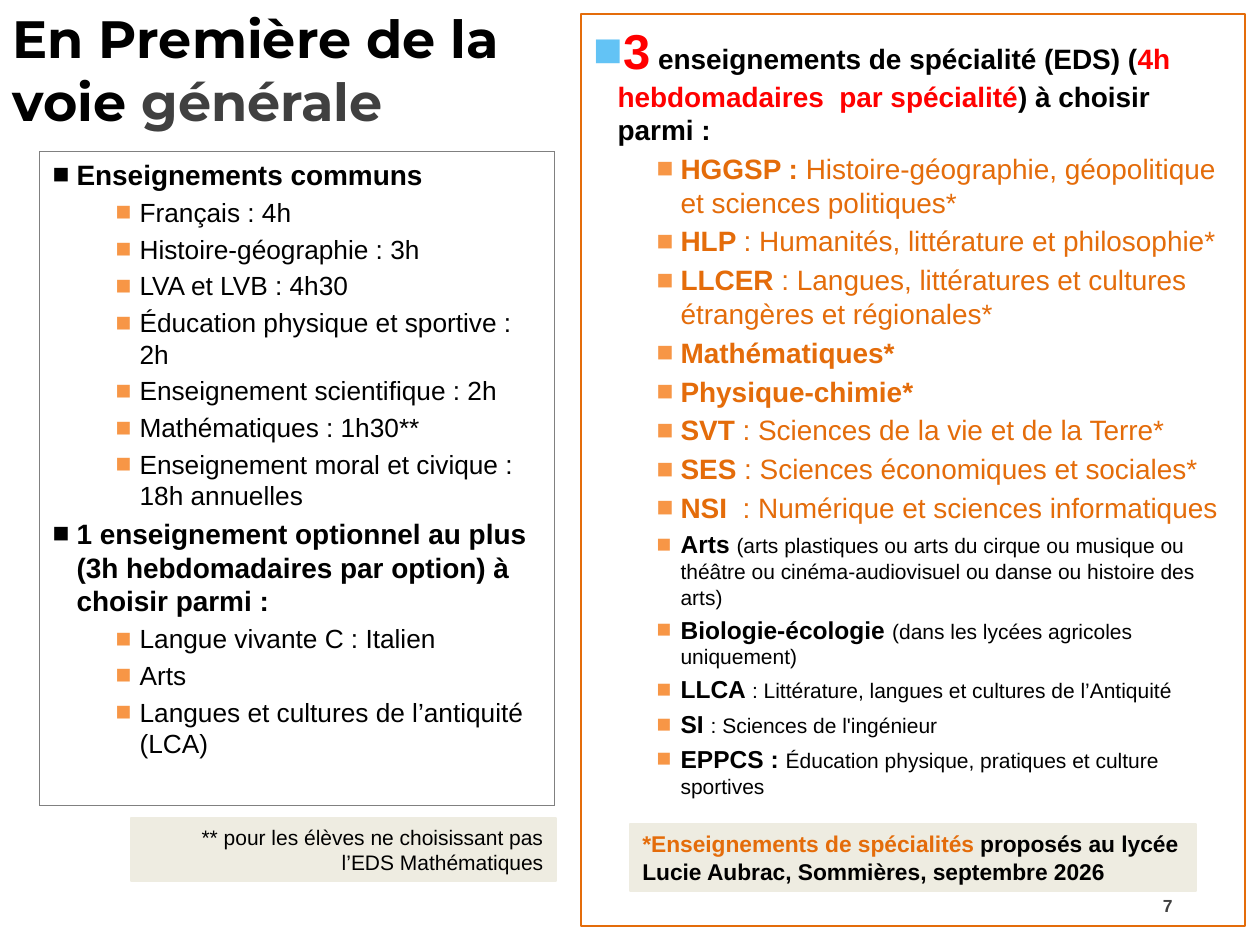
from dataclasses import dataclass

from lxml.etree import SubElement
from pptx import Presentation
from pptx.dml.color import RGBColor
from pptx.enum.shapes import MSO_SHAPE
from pptx.enum.text import MSO_ANCHOR, MSO_AUTO_SIZE, PP_ALIGN
from pptx.oxml.ns import qn
from pptx.util import Emu, Pt

SCALE = 914400 / 126  # EMU in one px


@dataclass(frozen=True)
class Theme:
    head: str = "Montserrat"
    body: str = "Arial"
    black: str = "000000"
    grey: str = "404040"
    frame: str = "808080"
    red: str = "FF0000"
    orange: str = "E46C0A"
    mark: str = "F79646"
    blue: str = "63C3F5"
    beige: str = "EEECE1"
    title: int = 30
    huge: int = 28
    main: int = 16
    item: int = 15
    name: int = 14
    note: int = 13
    small: int = 12
    page: int = 10


T = Theme()

COMMON = [
    "Français : 4h",
    "Histoire-géographie : 3h",
    "LVA et LVB : 4h30",
    "Éducation physique et sportive : 2h",
    "Enseignement scientifique : 2h",
    "Mathématiques : 1h30**",
    "Enseignement moral et civique : 18h annuelles",
]
OPTIONS = [
    "Langue vivante C : Italien",
    "Arts",
    "Langues et cultures de l’antiquité (LCA)",
]
LOCAL = [
    ("HGGSP : ", "Histoire-géographie, géopolitique et sciences politiques*"),
    ("HLP ", ": Humanités, littérature et philosophie*"),
    ("LLCER ", ": Langues, littératures et cultures étrangères et régionales*"),
    ("Mathématiques*", ""),
    ("Physique-chimie*", ""),
    ("SVT ", ": Sciences de la vie et de la Terre*"),
    ("SES ", ": Sciences économiques et sociales*"),
    ("NSI  ", ": Numérique et sciences informatiques"),
]
OTHER = [
    ("Arts ", "(arts plastiques ou arts du cirque ou musique ou théâtre "
              "ou cinéma-audiovisuel ou danse ou histoire des arts)"),
    ("Biologie-écologie ", "(dans les lycées agricoles uniquement)"),
    ("LLCA ", ": Littérature, langues et cultures de l’Antiquité"),
    ("SI ", ": Sciences de l'ingénieur"),
    ("EPPCS : ", "Éducation physique, pratiques et culture sportives"),
]


def px(n):
    return Emu(round(n * SCALE))


def rgb(color):
    return RGBColor.from_string(color)


def write(para, text, size=T.main, color=T.black, bold=False, font=T.body):
    """Add text to a paragraph; a newline becomes a line break."""
    for i, part in enumerate(text.split("\n")):
        if i:
            para.add_line_break()
        run = para.add_run()
        run.text = part
        run.font.size, run.font.bold, run.font.name = Pt(size), bold, font
        run.font.color.rgb = rgb(color)


def place(shape, box, anchor=MSO_ANCHOR.TOP):
    """Set the place of a shape and the way its text sits."""
    shape.left, shape.top, shape.width, shape.height = map(px, box)
    frame = shape.text_frame
    frame.word_wrap, frame.auto_size = True, MSO_AUTO_SIZE.NONE
    frame.vertical_anchor = anchor
    return frame


def panel(shape, box, color, width):
    """Format a body placeholder as an outlined panel."""
    shape.line.color.rgb, shape.line.width = rgb(color), Pt(width)
    return place(shape, box)


def bullet(frame, level, color):
    """Add a paragraph with a square bullet."""
    first = not frame.paragraphs[0].runs
    para = frame.paragraphs[0] if first else frame.add_paragraph()
    para.level = level
    para.space_before = Pt(0 if first else 3)
    props = para._p.get_or_add_pPr()
    props.set("marL", str(px(87 if level else 24)))
    props.set("indent", str(px(-24)))
    tint = SubElement(props, qn("a:buClr"))
    SubElement(tint, qn("a:srgbClr"), val=color)
    SubElement(props, qn("a:buFont"), typeface=T.body)
    SubElement(props, qn("a:buChar"), char="■")
    return para


def label(slide, box, align):
    """Add a beige note and return its paragraph."""
    shape = slide.shapes.add_shape(MSO_SHAPE.RECTANGLE, *map(px, box))
    shape.shadow.inherit = False
    shape.fill.solid()
    shape.fill.fore_color.rgb = shape.line.color.rgb = rgb(T.beige)
    shape.line.width = Pt(0.75)
    para = place(shape, box).paragraphs[0]
    para.alignment = align
    return para


def courses(frame):
    """Fill the list of common and optional courses."""
    groups = [
        ("Enseignements communs", COMMON),
        ("1 enseignement optionnel au plus\n"
         "(3h hebdomadaires par option) à choisir parmi :", OPTIONS),
    ]
    for head, items in groups:
        write(bullet(frame, 0, T.black), head, bold=True)
        for item in items:
            write(bullet(frame, 1, T.mark), item, size=T.item)


def majors(frame):
    """Fill the list of specialities."""
    para = bullet(frame, 0, T.blue)
    write(para, "3", size=T.huge, color=T.red, bold=True)
    write(para, " enseignements de spécialité (EDS) (", bold=True)
    write(para, "4h hebdomadaires  par spécialité", color=T.red, bold=True)
    write(para, ") à choisir parmi :", bold=True)
    groups = [
        (LOCAL, T.orange, T.main, T.main),
        (OTHER, T.black, T.name, T.small),
    ]
    for items, color, big, small in groups:
        for name, detail in items:
            para = bullet(frame, 1, T.mark)
            write(para, name, size=big, color=color, bold=True)
            if detail:
                write(para, detail, size=small, color=color)


def main():
    prs = Presentation()
    prs.slide_width, prs.slide_height = px(1260), px(945)
    slide = prs.slides.add_slide(prs.slide_layouts[3])
    title, left, right = slide.placeholders

    # Title
    para = place(title, (0, 0, 547, 107)).paragraphs[0]
    para.alignment = PP_ALIGN.LEFT
    look = dict(size=T.title, bold=True, font=T.head)
    write(para, "En Première de la voie ", **look)
    write(para, "générale", color=T.grey, **look)

    # Panels
    courses(panel(left, (40, 151, 515, 655), T.frame, 0))
    majors(panel(right, (581, 14, 664, 912), T.orange, 0.75))

    # Notes
    para = label(slide, (630, 824, 566, 67), PP_ALIGN.LEFT)
    write(para, "*Enseignements de spécialités ", size=T.note, color=T.orange, bold=True)
    write(para, "proposés au lycée Lucie Aubrac, Sommières, septembre 2026",
          size=T.note, bold=True)
    para = label(slide, (131, 818, 425, 63), PP_ALIGN.RIGHT)
    write(para, "** pour les élèves ne choisissant pas l’EDS Mathématiques", size=T.small)

    # Page number
    box = (1130, 881, 55, 50)
    page = slide.shapes.add_textbox(*map(px, box))
    para = place(page, box, MSO_ANCHOR.MIDDLE).paragraphs[0]
    para.alignment = PP_ALIGN.RIGHT
    write(para, "7", size=T.page, color=T.grey, bold=True)

    prs.save("out.pptx")


if __name__ == "__main__":
    main()
